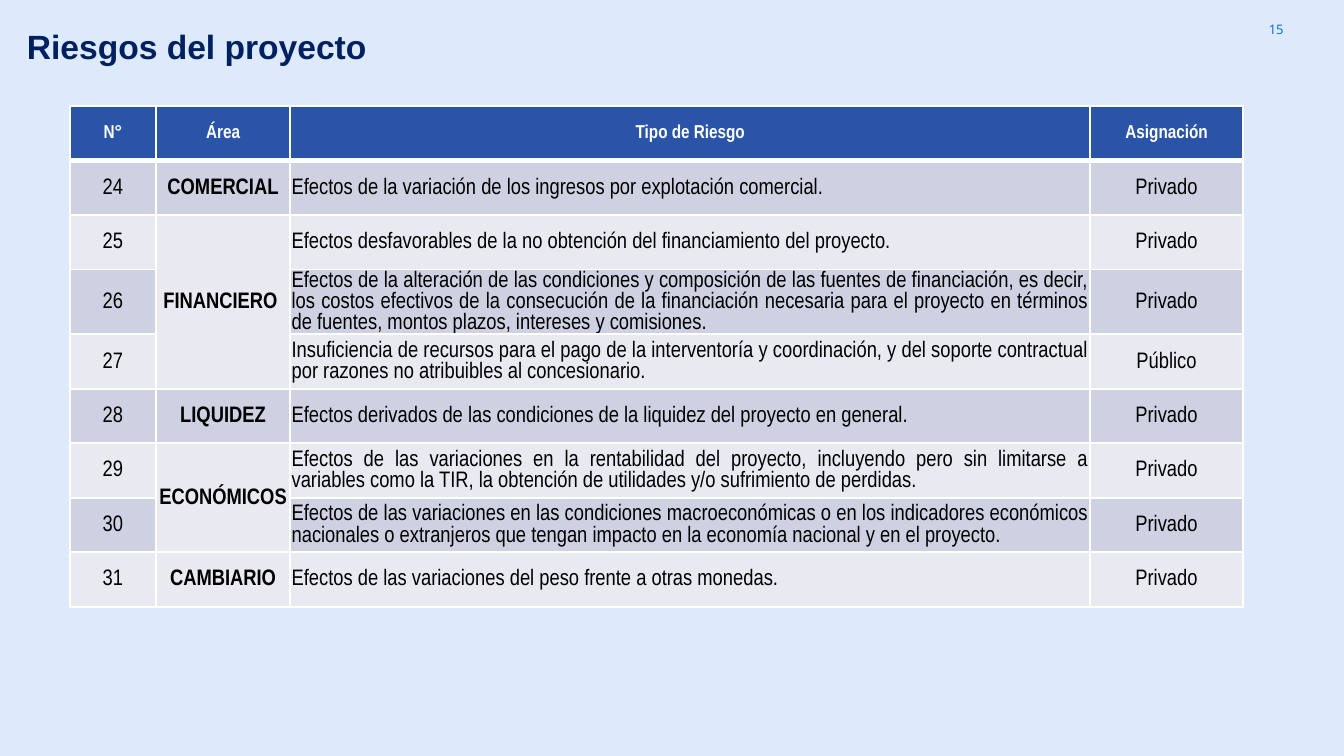
import pptx
import pptx.dml.color
import pptx.enum.text
import pptx.oxml
import pptx.oxml.ns
import pptx.util

WIDE = 10
HIGH = WIDE * 9 / 16
NAVY, BLUE, SKY, LINK = "002060", "2A54A7", "DCEAFB", "0066CD"
DARK, LIGHT, WHITE, BLACK = "CDD1E1", "E8E9F1", "FFFFFF", "000000"
COLS = [0.64, 1, 5.95, 1.14]
ROW = 3.65 / 9
ALIGN = pptx.enum.text.PP_ALIGN
HEAD = ["N°", "Área", "Tipo de Riesgo", "Asignación"]
FIRST = 24
# Each area with its risks: description and who takes it
AREAS = [
    ("COMERCIAL", [
        ("Efectos de la variación de los ingresos por explotación comercial.", "Privado")]),
    ("FINANCIERO ", [
        ("Efectos desfavorables de la no obtención del financiamiento del proyecto.", "Privado"),
        ("Efectos de la alteración de las condiciones y composición de las fuentes de "
         "financiación, es decir, los costos efectivos de la consecución de la financiación "
         "necesaria para el proyecto en términos de fuentes, montos plazos, intereses y "
         "comisiones.", "Privado"),
        ("Insuficiencia de recursos para el pago de la interventoría y coordinación, y del "
         "soporte contractual por razones no atribuibles al concesionario.", "Público")]),
    ("LIQUIDEZ", [
        ("Efectos derivados de las condiciones de la liquidez del proyecto en general.",
         "Privado")]),
    ("ECONÓMICOS", [
        ("Efectos de las variaciones en la rentabilidad del proyecto, incluyendo pero sin "
         "limitarse a variables como la TIR, la obtención de utilidades y/o sufrimiento de "
         "perdidas.", "Privado"),
        ("Efectos de las variaciones en las condiciones macroeconómicas o en los indicadores "
         "económicos nacionales o extranjeros que tengan impacto en la economía nacional y en "
         "el proyecto.", "Privado")]),
    ("CAMBIARIO", [
        ("Efectos de las variaciones del peso frente a otras monedas.", "Privado")]),
]


def color(code):
    return pptx.dml.color.RGBColor.from_string(code)


def inch(size):
    return pptx.util.Inches(size)


def write(frame, text, face, size, tone, bold=False, align=ALIGN.LEFT):
    para = frame.paragraphs[0]
    para.alignment = align
    run = para.add_run()
    run.text = text
    font = run.font
    font.name, font.size, font.bold = face, pptx.util.Pt(size), bold
    font.color.rgb = color(tone)
    return para


def setup(frame, side, edge):
    frame.word_wrap = True
    frame.auto_size = pptx.enum.text.MSO_AUTO_SIZE.NONE
    frame.vertical_anchor = pptx.enum.text.MSO_ANCHOR.MIDDLE
    frame.margin_left = frame.margin_right = inch(side)
    frame.margin_top = frame.margin_bottom = inch(edge)


def title(slide, text):
    shape = slide.shapes.title
    shape.left, shape.top = inch(0.13), inch(0.26)
    shape.width, shape.height = inch(9.22), inch(0.2)
    setup(shape.text_frame, 0.07, 0.04)
    para = write(shape.text_frame, text, "Arial", 18, NAVY, True)
    para.line_spacing = 0.9


def number(slide, text):
    box = slide.shapes.add_textbox(inch(9.05), 0, inch(0.6), inch(0.43))
    setup(box.text_frame, 0.1, 0.1)
    write(box.text_frame, text, "Open Sans", 7, LINK, align=ALIGN.RIGHT)


def border(cell, top, bottom):
    """Draw white cell borders; top and bottom are widths in points."""
    props = cell._tc.get_or_add_tcPr()
    for side, width in (("L", 1), ("R", 1), ("T", top), ("B", bottom)):
        props.append(pptx.oxml.parse_xml(
            f'<a:ln{side} {pptx.oxml.ns.nsdecls("a")} w="{pptx.util.Pt(width)}">'
            f'<a:solidFill><a:srgbClr val="{WHITE}"/></a:solidFill></a:ln{side}>'))


def style(cell, row):
    border(cell, 3 if row == 1 else 1, 3 if row == 0 else 1)
    cell.fill.solid()
    cell.fill.fore_color.rgb = color(BLUE if row == 0 else DARK if row % 2 else LIGHT)
    cell.vertical_anchor = pptx.enum.text.MSO_ANCHOR.MIDDLE
    cell.margin_left = cell.margin_right = cell.margin_top = inch(0.01)
    cell.margin_bottom = 0


def put(cell, text, bold=False, align=ALIGN.CENTER):
    write(cell.text_frame, text, "Arial Narrow", 12, BLACK, bold, align)


def risks(slide):
    count = 1 + sum(len(items) for _, items in AREAS)
    grid = slide.shapes.add_table(count, len(COLS), inch(0.52), inch(0.79),
                                  inch(sum(COLS)), inch(ROW * count)).table
    for col, width in zip(grid.columns, COLS):
        col.width = inch(width)
    for index, row in enumerate(grid.rows):
        row.height = inch(ROW)
        for cell in row.cells:
            style(cell, index)
    for col, text in enumerate(HEAD):
        write(grid.cell(0, col).text_frame, text, "Arial Narrow", 10, WHITE, True, ALIGN.CENTER)
    row = 1
    for area, items in AREAS:
        start = grid.cell(row, 1)
        if len(items) > 1:
            start.merge(grid.cell(row + len(items) - 1, 1))
        put(start, area, True)
        for text, owner in items:
            put(grid.cell(row, 0), str(FIRST + row - 1))
            put(grid.cell(row, 2), text, align=ALIGN.JUSTIFY)
            put(grid.cell(row, 3), owner)
            row += 1


def main():
    deck = pptx.Presentation()
    deck.slide_width, deck.slide_height = inch(WIDE), inch(HIGH)
    slide = deck.slides.add_slide(deck.slide_layouts[5])
    slide.background.fill.solid()
    slide.background.fill.fore_color.rgb = color(SKY)
    number(slide, "15")
    title(slide, "Riesgos del proyecto")
    risks(slide)
    deck.save("out.pptx")


if __name__ == "__main__":
    main()
